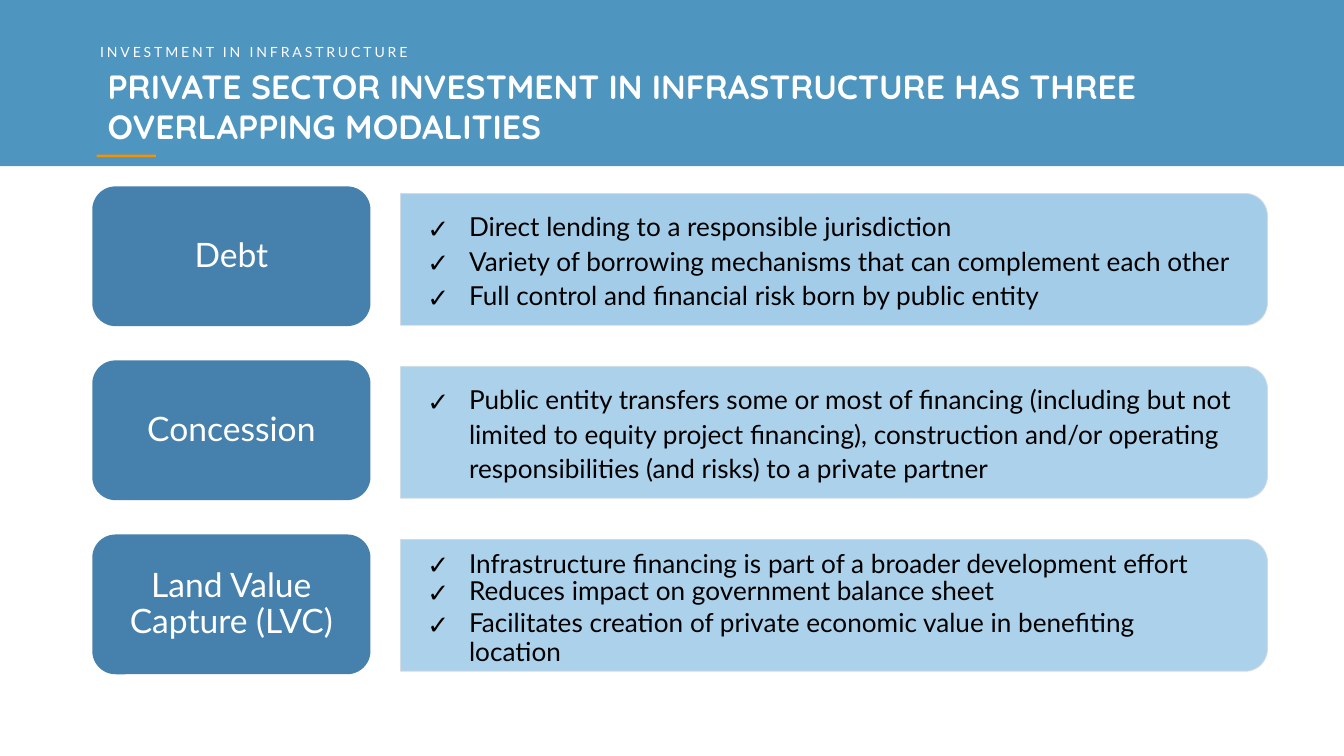
import math

from lxml import etree
from pptx import Presentation
from pptx import util as u
from pptx.dml.color import RGBColor
from pptx.enum import shapes, text
from pptx.oxml.ns import qn

COLORS = {
    "band": "1170AA", "tile": "4681AD", "panel": "A3CCE9", "edge": "CFDAE5",
    "accent": "F69200", "white": "FFFFFF", "black": "000000",
}
WIDTH = u.Inches(10)
HEIGHT = WIDTH * 9 // 16
COLUMNS, ROWS = 100, 56.25
TILE_TOP, TILE_PITCH = 13.87, 12.95
PANEL_TOP, PANEL_PITCH = 14.4, 12.87

MODALITIES = [
    ("Debt", 100, [
        ("Direct lending to a responsible jurisdiction", 1.1, 0),
        ("Variety of borrowing mechanisms that can complement each other", 1.1, 0),
        ("Full control and financial risk born by public entity", 1.1, 0),
    ]),
    ("Concession", 90, [
        ("Public entity transfers some or most of financing (including but not "
         "limited to equity project financing), construction and/or operating "
         "responsibilities (and risks) to a private partner", 1.1, 0),
    ]),
    ("Land Value Capture (LVC)", 90, [
        ("Infrastructure financing is part of a broader development effort", 1.1, 0),
        ("Reduces impact on government balance sheet", 0.9, 2),
        ("Facilitates creation of private economic value in benefiting location", 0.9, 2),
    ]),
]


def col(count):
    return round(WIDTH * count / COLUMNS)


def row(count):
    return round(HEIGHT * count / ROWS)


def set_alpha(fill_format, percent):
    if percent < 100:
        color = fill_format._xPr.find(qn("a:solidFill"))[0]
        etree.SubElement(color, qn("a:alpha"), val=str(percent * 1000))


def write(paragraph, words, font="Lato", size=14, color="black", bold=False,
          align=text.PP_ALIGN.LEFT, spacing=None, after=0, tracking=None, bullet=None):
    run = paragraph.add_run()
    run.text = words
    run.font.name, run.font.size, run.font.bold = font, u.Pt(size), bold
    run.font.color.rgb = RGBColor.from_string(COLORS[color])
    paragraph.alignment = align
    paragraph.space_before, paragraph.space_after = u.Pt(0), u.Pt(after)
    if spacing:
        paragraph.line_spacing = spacing
    if tracking:
        run.font._element.set("spc", str(round(tracking * 100)))
    if bullet:
        properties = paragraph._p.get_or_add_pPr()
        indent = u.Inches(0.31)
        properties.set("marL", str(indent))
        properties.set("indent", str(-indent))
        etree.SubElement(properties, qn("a:buFont"), typeface="Noto Sans Symbols")
        etree.SubElement(properties, qn("a:buChar"), char=bullet)


class Deck:
    def __init__(self):
        self.presentation = Presentation()
        self.presentation.slide_width, self.presentation.slide_height = WIDTH, HEIGHT
        self.slide = self.presentation.slides.add_slide(self.presentation.slide_layouts[5])

    def paint(self, shape, fill, alpha=100, edge=None):
        shape.shadow.inherit = False
        shape.fill.solid()
        shape.fill.fore_color.rgb = RGBColor.from_string(COLORS[fill])
        set_alpha(shape.fill, alpha)
        if edge:
            shape.line.color.rgb = RGBColor.from_string(COLORS[edge])
            shape.line.width = u.Pt(0.5)
            set_alpha(shape.line.fill, 90)
        else:
            shape.line.fill.background()

    def frame(self, shape, insets=(0, 0, 0, 0), wrap=True):
        frame = shape.text_frame
        frame.auto_size, frame.word_wrap = text.MSO_AUTO_SIZE.NONE, wrap
        frame.vertical_anchor = text.MSO_ANCHOR.MIDDLE
        (frame.margin_left, frame.margin_top,
         frame.margin_right, frame.margin_bottom) = map(u.Inches, insets)
        return frame

    def block(self, left, top, width, height, fill, alpha=100,
              kind=shapes.MSO_SHAPE.RECTANGLE):
        block = self.slide.shapes.add_shape(kind, col(left), row(top), col(width), row(height))
        self.paint(block, fill, alpha)
        return block

    def title(self, words, left, top, width, height):
        title = self.slide.shapes.title
        title.left, title.top, title.width, title.height = (
            col(left), row(top), col(width), row(height))
        write(self.frame(title).paragraphs[0], words, font="Quicksand", size=18,
              color="white", bold=True)
        self.slide.shapes._spTree.append(title._element)

    def kicker(self, words, left, top, width, height):
        kicker = self.slide.shapes.add_textbox(col(left), row(top), col(width), row(height))
        write(self.frame(kicker, wrap=False).paragraphs[0], words, size=7.5,
              color="white", tracking=1.5)

    def tile(self, words, left, top, width, height):
        tile = self.block(left, top, width, height, "tile",
                          kind=shapes.MSO_SHAPE.ROUNDED_RECTANGLE)
        frame = self.frame(tile, (0.13, 0.1, 0.13, 0.1))
        write(frame.paragraphs[0], words, size=18, color="white",
              align=text.PP_ALIGN.CENTER, spacing=0.9, after=6)

    def panel(self, points, left, top, width, height, alpha, radius=1.65):
        right, bottom = left + width, top + height
        outline = [(left, top)]
        for center_y, start in ((top + radius, -90), (bottom - radius, 0)):
            for angle in range(start, start + 91, 5):
                turn = math.radians(angle)
                outline.append((right - radius + radius * math.cos(turn),
                                center_y + radius * math.sin(turn)))
        outline.append((left, bottom))
        corners = [(col(x), row(y)) for x, y in outline]
        builder = self.slide.shapes.build_freeform(*corners[0])
        builder.add_line_segments(corners[1:], close=True)
        panel = builder.convert_to_shape()
        self.paint(panel, "panel", alpha, "edge")
        frame = self.frame(panel, (0.2, 0.15, 0.25, 0.15))
        for index, (words, spacing, after) in enumerate(points):
            paragraph = frame.add_paragraph() if index else frame.paragraphs[0]
            write(paragraph, words, spacing=spacing, after=after, bullet="✓")


def main():
    deck = Deck()
    deck.block(0, 0, COLUMNS, 12.37, "band", alpha=74)
    deck.title("PRIVATE SECTOR INVESTMENT IN INFRASTRUCTURE HAS THREE "
               "OVERLAPPING MODALITIES", 8, 4.85, 86.2, 6.1)
    for index, (name, alpha, points) in enumerate(MODALITIES):
        deck.panel(points, 29.8, PANEL_TOP + index * PANEL_PITCH, 64.5, 9.8, alpha)
        deck.tile(name, 6.87, TILE_TOP + index * TILE_PITCH, 20.7, 10.4)
    deck.kicker("INVESTMENT IN INFRASTRUCTURE", 7.45, 3.2, 24.1, 1.3)
    deck.block(7.2, 11.5, 4.4, 0.2, "accent")
    deck.presentation.save("out.pptx")


if __name__ == "__main__":
    main()
